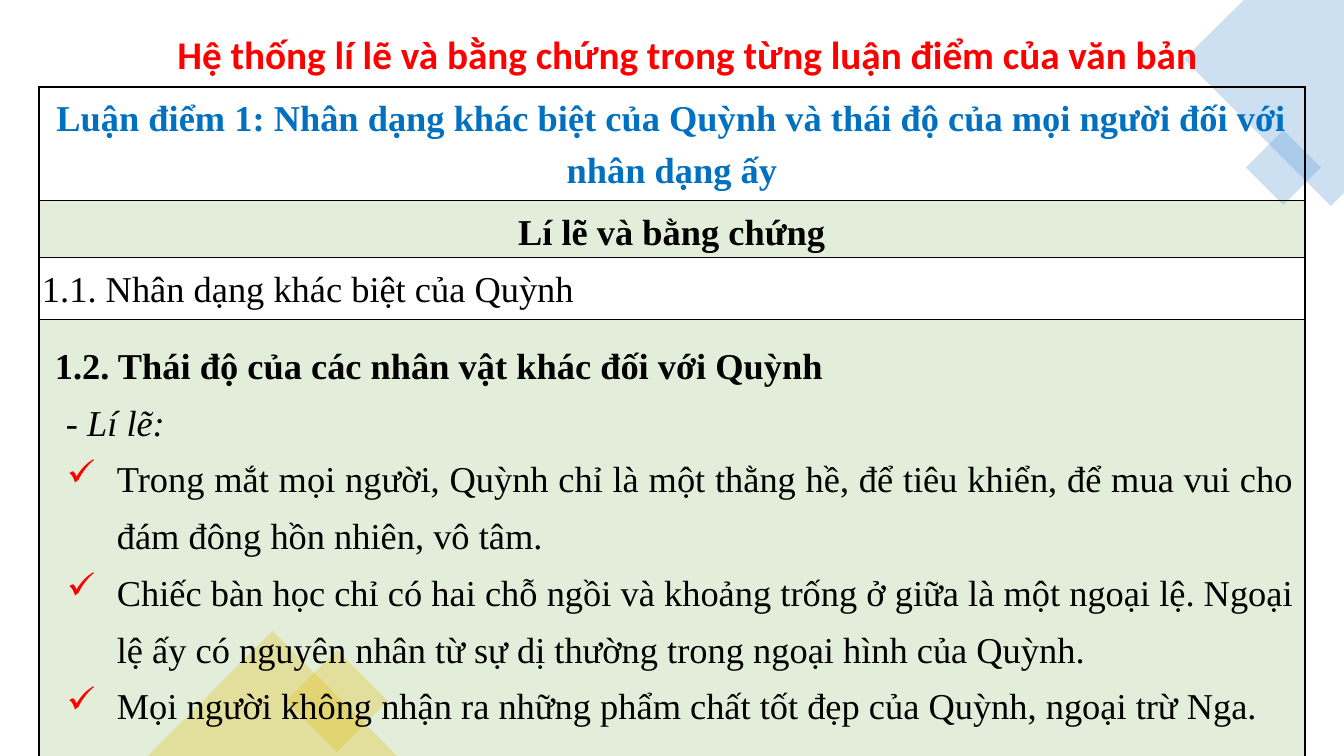
import pptx
import pptx.util
import pptx.dml.color
import pptx.enum.shapes
import pptx.enum.text
import pptx.oxml
import pptx.oxml.ns
from lxml import etree

RGBColor = pptx.dml.color.RGBColor
Align = pptx.enum.text.PP_ALIGN
Preset = pptx.enum.shapes.MSO_SHAPE
qn = pptx.oxml.ns.qn

BLACK = RGBColor(0, 0, 0)
RED = RGBColor(0xFF, 0, 0)
HEADING_BLUE = RGBColor(0, 0x70, 0xC0)
LIGHT_BLUE = RGBColor(0x5B, 0x9B, 0xD5)
GOLD = RGBColor(0xFF, 0xC0, 0)
GREEN = RGBColor(0x70, 0xAD, 0x47)

WIDTH, HEIGHT = 1344, 756
SERIF = "Times New Roman"
CELL_MARGIN = 3


def px(length):
    return round(length * 914400 / 100.8)


def box_px(box):
    return [px(length) for length in box]


def add_child(parent, tag, **attributes):
    return etree.SubElement(parent, qn(tag), attributes)


def fill_translucent(fill, color, percent):
    fill.solid()
    fill.fore_color.rgb = color
    color_element = fill._xPr.find(qn("a:solidFill"))[0]
    add_child(color_element, "a:alpha", val=str(percent * 1000))


def write_text(frame, text, size=26, font=SERIF, color=BLACK, bold=False, italic=False,
               align=Align.LEFT, after=0, left=0, hanging=0, bullet=None):
    paragraph = frame.paragraphs[0]
    if paragraph.runs:
        paragraph = frame.add_paragraph()
    paragraph.alignment = align
    paragraph.line_spacing = 1.3
    paragraph.space_before = pptx.util.Pt(0)
    paragraph.space_after = pptx.util.Pt(after)
    properties = paragraph._p.get_or_add_pPr()
    properties.set("marL", str(px(left)))
    properties.set("indent", str(px(-hanging)))
    if bullet:
        bullet_color = add_child(properties, "a:buClr")
        add_child(bullet_color, "a:srgbClr", val=str(RED))
        add_child(properties, "a:buChar", char=bullet)
    run = paragraph.add_run()
    run.text = text
    run.font.size = pptx.util.Pt(size)
    run.font.name = font
    run.font.bold = bold
    run.font.italic = italic
    run.font.color.rgb = color


def finish_decoration(shape, color, rotation=0):
    shape.shadow.inherit = False
    shape.line.fill.background()
    shape.rotation = rotation
    fill_translucent(shape.fill, color, 30)


def add_decoration(slide, preset, box, color, rotation=0):
    shape = slide.shapes.add_shape(preset, *box_px(box))
    finish_decoration(shape, color, rotation)


def add_top_corner(slide, box):
    left, top, width, height = box
    right = left + width
    outline = [(right, top), (left + 60, top), (left, top + 59),
               (right - 13, top + height), (right, top + height - 13)]
    points = [(px(x), px(y)) for x, y in outline]
    builder = slide.shapes.build_freeform(*points[0])
    builder.add_line_segments(points[1:], close=True)
    finish_decoration(builder.convert_to_shape(), LIGHT_BLUE)
    add_decoration(slide, Preset.RECTANGLE, (left + 73, top + 141, 53, 53), LIGHT_BLUE, 315)


def add_bottom_corner(slide, box):
    left, top, width, height = box
    add_decoration(slide, Preset.RECTANGLE, (left + 153, top + 34, 72, 72), GOLD, 45)
    add_decoration(slide, Preset.ISOSCELES_TRIANGLE, box, GOLD)


def add_text_box(slide, box):
    frame = slide.shapes.add_textbox(*box_px(box)).text_frame
    frame.word_wrap = True
    return frame


def add_title(slide, box):
    write_text(add_text_box(slide, box),
               "Hệ thống lí lẽ và bằng chứng trong từng luận điểm của văn bản",
               size=28, font="Calibri", color=RED, bold=True, align=Align.CENTER, after=10)


def set_borders(cell, sides):
    properties = cell._tc.get_or_add_tcPr()
    for side in sides:
        line = add_child(properties, f"a:ln{side}", w="12700")
        fill = add_child(line, "a:solidFill")
        add_child(fill, "a:srgbClr", val=str(BLACK))


def add_argument_table(slide, box):
    rows = [
        (113, False, "Luận điểm 1: Nhân dạng khác biệt của Quỳnh và thái độ của mọi người "
                     "đối với nhân dạng ấy",
         dict(color=HEADING_BLUE, bold=True, align=Align.CENTER)),
        (57, True, "Lí lẽ và bằng chứng", dict(bold=True, align=Align.CENTER)),
        (62, False, "1.1. Nhân dạng khác biệt của Quỳnh", {}),
        (box[3] - 232, True, None, {}),
    ]
    table = slide.shapes.add_table(len(rows), 1, *box_px(box)).table
    table.first_row = False
    table.horz_banding = False
    for index, (height, shaded, text, style) in enumerate(rows):
        table.rows[index].height = px(height)
        cell = table.cell(index, 0)
        cell.margin_left = cell.margin_right = px(CELL_MARGIN)
        cell.margin_top = cell.margin_bottom = 0
        set_borders(cell, "LRTB" if text else "LRT")
        if shaded:
            fill_translucent(cell.fill, GREEN, 20)
        else:
            cell.fill.background()
        if text:
            write_text(cell.text_frame, text, after=8, **style)


def add_arguments(slide, box):
    frame = add_text_box(slide, box)
    write_text(frame, "1.2. Thái độ của các nhân vật khác đối với Quỳnh",
               bold=True, align=Align.JUSTIFY, left=12, hanging=12)
    write_text(frame, "- Lí lẽ:", italic=True, align=Align.JUSTIFY, left=12, hanging=1)
    for argument in (
        "Trong mắt mọi người, Quỳnh chỉ là một thằng hề, để tiêu khiển, để mua vui cho "
        "đám đông hồn nhiên, vô tâm.",
        "Chiếc bàn học chỉ có hai chỗ ngồi và khoảng trống ở giữa là một ngoại lệ. Ngoại lệ "
        "ấy có nguyên nhân từ sự dị thường trong ngoại hình của Quỳnh.",
        "Mọi người không nhận ra những phẩm chất tốt đẹp của Quỳnh, ngoại trừ Nga.",
    ):
        write_text(frame, argument, align=Align.JUSTIFY, left=62, hanging=50, bullet="✓")


def main():
    presentation = pptx.Presentation()
    presentation.slide_width = px(WIDTH)
    presentation.slide_height = px(HEIGHT)
    slide = presentation.slides.add_slide(presentation.slide_layouts[6])
    add_top_corner(slide, (1184, 0, 160, 206))
    add_bottom_corner(slide, (148, 631, 249, 125))
    add_title(slide, (90, 11, 1194, 67))
    add_argument_table(slide, (39, 87, 1266, HEIGHT - 87))
    add_arguments(slide, (45, 325, 1260, 406))
    presentation.save("out.pptx")


if __name__ == "__main__":
    main()
